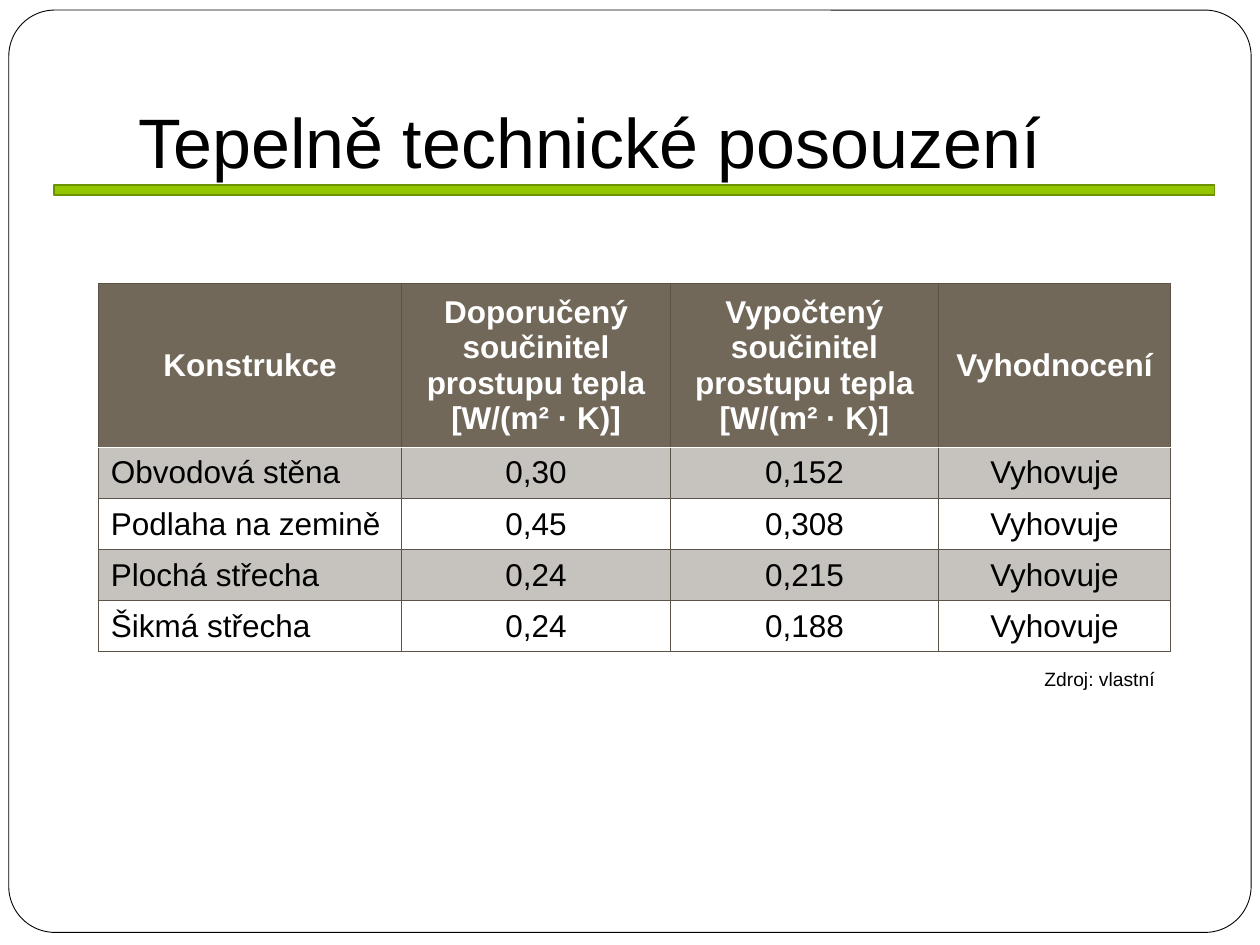
from lxml import etree
from pptx import Presentation
from pptx import util as u
from pptx.dml.color import RGBColor
from pptx.enum import shapes, text
from pptx.oxml import ns

BLACK = RGBColor(0x00, 0x00, 0x00)
WHITE = RGBColor(0xFF, 0xFF, 0xFF)
GREEN = RGBColor(0x94, 0xC6, 0x00)
DARK_GREEN = RGBColor(0x6D, 0x92, 0x00)
BROWN = RGBColor(0x71, 0x68, 0x5A)
DARK_BROWN = RGBColor(0x5B, 0x53, 0x47)

COLUMNS, ROWS = 100, 75
TABLE_COLUMNS = (24.1, 21.3, 21.3, 18.4)
HEADER_ROW, BODY_ROW = 12.2, 4.06
RESULTS = (
    ("Konstrukce", "Doporučený součinitel prostupu tepla [W/(m² · K)]",
     "Vypočtený součinitel prostupu tepla [W/(m² · K)]", "Vyhodnocení"),
    ("Obvodová stěna", "0,30", "0,152", "Vyhovuje"),
    ("Podlaha na zemině", "0,45", "0,308", "Vyhovuje"),
    ("Plochá střecha", "0,24", "0,215", "Vyhovuje"),
    ("Šikmá střecha", "0,24", "0,188", "Vyhovuje"),
)


class Page:
    """Draws styled elements on one slide, measured in grid columns and rows."""

    def __init__(self, deck, font="Arial"):
        self.page = deck.slides.add_slide(deck.slide_layouts[6])
        self.column = deck.slide_width / COLUMNS
        self.row = deck.slide_height / ROWS
        self.font = font

    def place(self, left, top, width, height):
        return (round(left * self.column), round(top * self.row),
                round(width * self.column), round(height * self.row))

    def words(self, frame, wording, size, color=BLACK, bold=False, align=text.PP_ALIGN.LEFT):
        para = frame.paragraphs[0]
        para.alignment = align
        span = para.add_run()
        span.text = wording
        span.font.color.rgb = color
        for name, value in {"name": self.font, "size": u.Pt(size), "bold": bold}.items():
            setattr(span.font, name, value)

    def shape(self, kind, at, fill, line, weight, corner=None):
        shape = self.page.shapes.add_shape(kind, *self.place(*at))
        shape.shadow.inherit = False
        shape.fill.solid()
        shape.fill.fore_color.rgb = fill
        shape.line.color.rgb = line
        shape.line.width = u.Pt(weight)
        if corner is not None:
            shape.adjustments[0] = corner

    def text(self, at, wording, size, **layout):
        box = self.page.shapes.add_textbox(*self.place(*at))
        for name, value in layout.items():
            setattr(box.text_frame, name, value)
        self.words(box.text_frame, wording, size)

    def border(self, cell, sides):
        properties = cell._tc.get_or_add_tcPr()
        for index, (side, (color, weight)) in enumerate(sides.items()):
            line = etree.Element(ns.qn(f"a:ln{side}"), w=str(u.Pt(weight)))
            fill = etree.SubElement(line, ns.qn("a:solidFill"))
            etree.SubElement(fill, ns.qn("a:srgbClr"), val=str(color))
            properties.insert(index, line)

    def shade(self, cell, opacity):
        if not opacity:
            cell.fill.background()
            return
        cell.fill.solid()
        cell.fill.fore_color.rgb = BROWN
        if opacity < 100:
            color = cell._tc.tcPr.find(".//" + ns.qn("a:srgbClr"))
            etree.SubElement(color, ns.qn("a:alpha"), val=str(opacity * 1000))

    def table(self, left, top, widths, heights, rows, size):
        at = self.place(left, top, sum(widths), sum(heights))
        table = self.page.shapes.add_table(len(rows), len(widths), *at).table
        table.horz_banding = False
        for column, width in zip(table.columns, widths):
            column.width = round(width * self.column)
        for row, height in zip(table.rows, heights):
            row.height = round(height * self.row)
        thin, divider = (DARK_BROWN, 0.75), (WHITE, 1)
        for r, values in enumerate(rows):
            header = r == 0
            for c, wording in enumerate(values):
                cell = table.cell(r, c)
                cell.vertical_anchor = text.MSO_ANCHOR.MIDDLE
                centred = header or c > 0
                self.words(cell.text_frame, wording, size, WHITE if header else BLACK, header,
                           text.PP_ALIGN.CENTER if centred else text.PP_ALIGN.LEFT)
                self.shade(cell, 100 if header else 40 * (r % 2))
                self.border(cell, {"L": thin, "R": thin,
                                   "T": divider if r == 1 else thin,
                                   "B": divider if header else thin})


def main():
    deck = Presentation()
    deck.slide_width, deck.slide_height = u.Inches(10), u.Inches(7.5)
    page = Page(deck)
    page.shape(shapes.MSO_SHAPE.ROUNDED_RECTANGLE, (0.7, 0.8, 98.6, 73.2),
               WHITE, BLACK, 0.5, corner=0.05)
    page.text((10, 3, 85, 12.5), "Tepelně technické posouzení", 40, word_wrap=True,
              vertical_anchor=text.MSO_ANCHOR.BOTTOM, margin_bottom=u.Inches(0.1))
    heights = [HEADER_ROW] + [BODY_ROW] * (len(RESULTS) - 1)
    page.table(7.8, 22.5, TABLE_COLUMNS, heights, RESULTS, 18)
    page.shape(shapes.MSO_SHAPE.RECTANGLE, (4.3, 14.7, 92.1, 0.8), GREEN, DARK_GREEN, 1)
    page.text((81.9, 52.5, 10.8, 2.9), "Zdroj: vlastní", 11, word_wrap=False,
              auto_size=text.MSO_AUTO_SIZE.SHAPE_TO_FIT_TEXT)
    deck.save("out.pptx")


if __name__ == "__main__":
    main()
